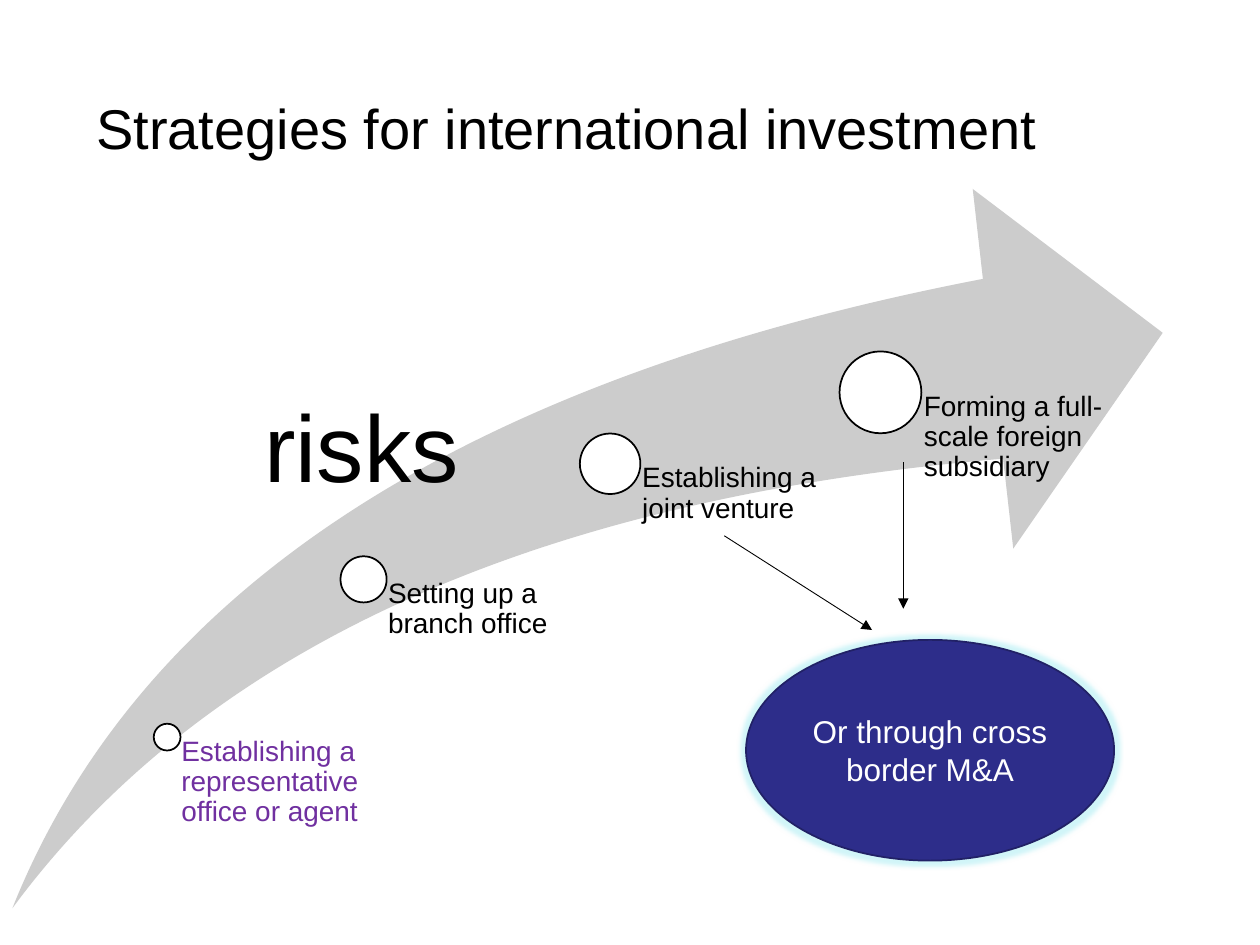
from lxml.etree import SubElement
from pptx import Presentation
from pptx.dml.color import RGBColor
from pptx.enum.shapes import MSO_CONNECTOR, MSO_SHAPE
from pptx.enum.text import MSO_ANCHOR, MSO_AUTO_SIZE, PP_ALIGN
from pptx.oxml.ns import qn
from pptx.util import Cm, Pt

SWOOSH_BOTTOM = 18.31
STAGES = [
    ("Establishing a representative office or agent", 3.37, 14.86, 0.54, 3.96, "7030A0"),
    ("Setting up a branch office", 7.33, 11.68, 0.93, 4.88, "000000"),
    ("Establishing a joint venture", 12.3, 9.35, 1.22, 4.88, "000000"),
    ("Forming a full-scale foreign subsidiary", 17.75, 7.91, 1.65, 4.88, "000000"),
]


def rgb(color):
    return RGBColor.from_string(color)


def write(frame, words, size, color="000000", align=PP_ALIGN.LEFT):
    frame.word_wrap = True
    frame.text = words
    paragraph = frame.paragraphs[0]
    paragraph.alignment = align
    font = paragraph.runs[0].font
    font.name = "Arial"
    font.size = Pt(size)
    font.color.rgb = rgb(color)
    return paragraph


def add_title(slide, words):
    title = slide.shapes.title
    title.left, title.top, title.width, title.height = Cm(0), Cm(1.75), Cm(22.86), Cm(3.18)
    title.text_frame.vertical_anchor = MSO_ANCHOR.TOP
    title.text_frame.auto_size = MSO_AUTO_SIZE.NONE
    write(title.text_frame, words, 32, align=PP_ALIGN.CENTER)


def add_figure(slide, preset, left, top, width, height, fill, outline=None):
    figure = slide.shapes.add_shape(preset, Cm(left), Cm(top), Cm(width), Cm(height))
    figure.shadow.inherit = False
    figure.fill.solid()
    figure.fill.fore_color.rgb = rgb(fill)
    if outline:
        figure.line.color.rgb = rgb(outline)
        figure.line.width = Pt(1)
    else:
        figure.line.fill.background()
    return figure


def add_stage(slide, words, center_x, center_y, diameter, width, color):
    radius = diameter / 2
    add_figure(slide, MSO_SHAPE.OVAL, center_x - radius, center_y - radius,
               diameter, diameter, "FFFFFF", "000000")
    label = slide.shapes.add_textbox(Cm(center_x), Cm(center_y), Cm(width),
                                     Cm(SWOOSH_BOTTOM - center_y))
    frame = label.text_frame
    frame.margin_left = Cm(diameter * 0.53)
    frame.margin_top = frame.margin_right = frame.margin_bottom = 0
    write(frame, words, 16, color).line_spacing = 0.9


def add_glow(figure, color, radius):
    effects = figure._element.spPr.find(qn("a:effectLst"))
    glow = SubElement(effects, qn("a:glow"), rad=str(radius))
    tint = SubElement(glow, qn("a:srgbClr"), val=color)
    SubElement(tint, qn("a:alpha"), val="40000")


def add_merger_option(slide):
    merger = add_figure(slide, MSO_SHAPE.OVAL, 15.04, 12.9, 7.42, 4.45, "2D2D8A", "212166")
    add_glow(merger, "8CE6EE", Pt(5))
    merger.text_frame.vertical_anchor = MSO_ANCHOR.MIDDLE
    write(merger.text_frame, "Or through cross border M&A", 18, "FFFFFF", PP_ALIGN.CENTER)


def add_arrow(slide, start_x, start_y, end_x, end_y):
    arrow = slide.shapes.add_connector(MSO_CONNECTOR.STRAIGHT, Cm(start_x), Cm(start_y),
                                       Cm(end_x), Cm(end_y))
    arrow.line.color.rgb = rgb("000000")
    arrow.line.width = Pt(0.5)
    SubElement(arrow.line._get_or_add_ln(), qn("a:tailEnd"), type="triangle")
    SubElement(arrow._element.spPr, qn("a:effectLst"))


def add_risks(slide):
    risks = slide.shapes.add_textbox(Cm(5.08), Cm(7.7), Cm(6.99), Cm(2.57))
    risks.text_frame.auto_size = MSO_AUTO_SIZE.SHAPE_TO_FIT_TEXT
    write(risks.text_frame, "risks", 54)


def main():
    deck = Presentation()
    deck.slide_width, deck.slide_height = Cm(25.4), Cm(19.05)
    slide = deck.slides.add_slide(deck.slide_layouts[5])
    add_title(slide, "Strategies for international investment")
    swoosh = add_figure(slide, MSO_SHAPE.SWOOSH_ARROW, 0.25, 3.81, 23.19, 14.5, "CCCCCC")
    swoosh.adjustments[0] = swoosh.adjustments[1] = 0.25
    for stage in STAGES:
        add_stage(slide, *stage)
    add_merger_option(slide)
    add_arrow(slide, 14.6, 10.8, 17.58, 12.7)
    add_arrow(slide, 18.21, 9.32, 18.21, 12.27)
    add_risks(slide)
    deck.save("out.pptx")


if __name__ == "__main__":
    main()
